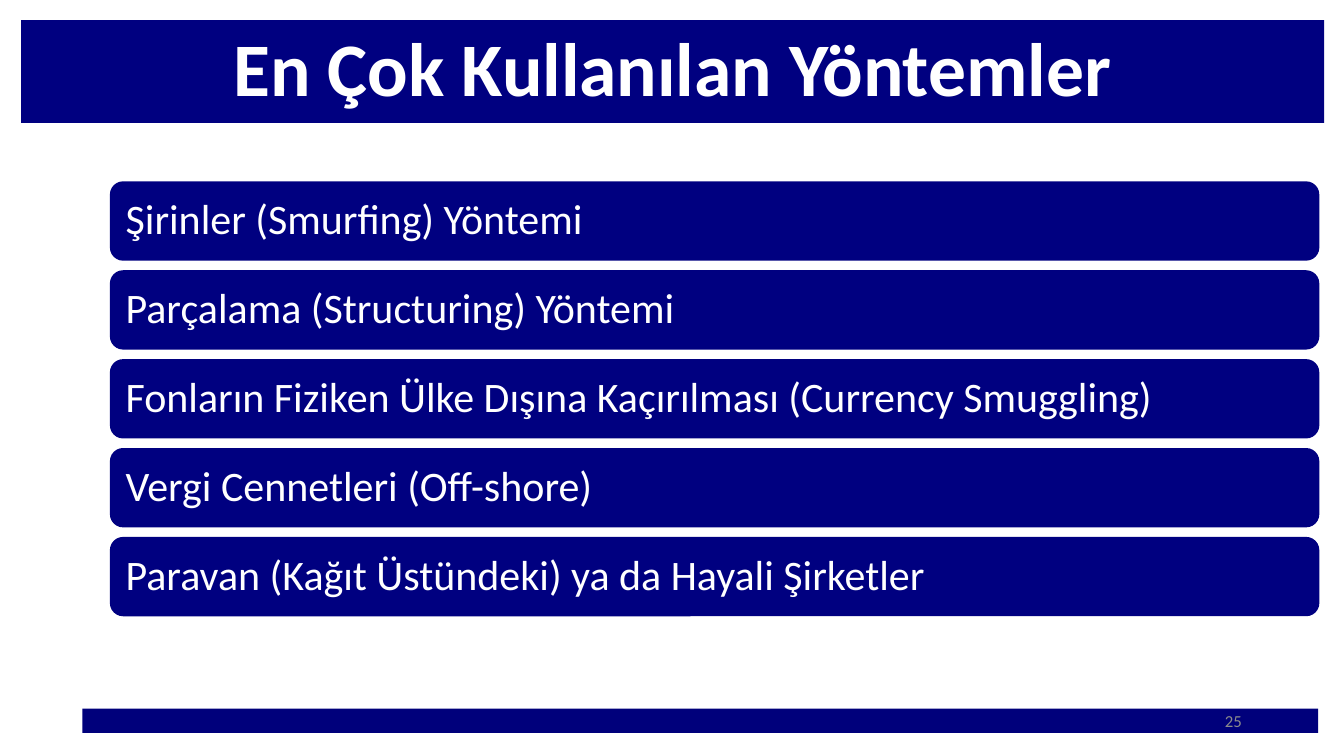
from dataclasses import dataclass

from pptx import Presentation
from pptx import util as u
from pptx.dml.color import RGBColor
from pptx.enum import shapes, text

NAVY = RGBColor(0x00, 0x00, 0x80)
DARK = RGBColor(0x00, 0x00, 0x7B)
WHITE = RGBColor(0xFF, 0xFF, 0xFF)
GREY = RGBColor(0x8C, 0x8C, 0x8C)
FONT = "Calibri"
PITCH = 2.24  # distance between bar tops, cm


@dataclass
class Box:
    left: float
    top: float
    width: float
    height: float

    def place(self) -> tuple:
        return tuple(u.Cm(n) for n in (self.left, self.top, self.width, self.height))


def write(shape, words: str, size: float, color: RGBColor = WHITE, bold: bool = False,
          align=text.PP_ALIGN.LEFT, line: float = 0.9, inset: float = 0.25) -> None:
    frame = shape.text_frame
    frame.word_wrap = True
    frame.auto_size = text.MSO_AUTO_SIZE.NONE
    frame.vertical_anchor = text.MSO_ANCHOR.MIDDLE
    frame.margin_left = frame.margin_right = u.Cm(inset)
    par = frame.paragraphs[0]
    par.alignment = align
    par.line_spacing = line
    run = par.add_run()
    run.text = words
    font = run.font
    font.name, font.size, font.bold = FONT, u.Pt(size), bold
    font.color.rgb = color


def draw(slide, kind, box: Box, fill: RGBColor):
    shape = slide.shapes.add_shape(kind, *box.place())
    shape.shadow.inherit = False
    shape.fill.solid()
    shape.fill.fore_color.rgb = fill
    shape.line.fill.background()
    return shape


def main() -> None:
    deck = Presentation()
    deck.slide_width, deck.slide_height = u.Cm(33.87), u.Cm(19.05)
    slide = deck.slides.add_slide(deck.slide_layouts[5])

    # Title band
    title = slide.shapes.title
    title.left, title.top, title.width, title.height = Box(0.53, 0.51, 32.84, 2.59).place()
    title.fill.solid()
    title.fill.fore_color.rgb = NAVY
    write(title, "En Çok Kullanılan Yöntemler", 54, bold=True, align=text.PP_ALIGN.CENTER)

    # Footer band and page number
    draw(slide, shapes.MSO_SHAPE.RECTANGLE, Box(2.08, 17.86, 31.14, 0.61), DARK)
    page = slide.shapes.add_textbox(*Box(23.93, 17.65, 7.62, 1.02).place())
    write(page, "25", 12, color=GREY, align=text.PP_ALIGN.RIGHT, line=1.0)

    # Method bars
    names = [
        "Şirinler (Smurfing) Yöntemi",
        "Parçalama (Structuring) Yöntemi",
        "Fonların Fiziken Ülke Dışına Kaçırılması (Currency Smuggling)",
        "Vergi Cennetleri (Off-shore)",
        "Paravan (Kağıt Üstündeki) ya da Hayali Şirketler",
    ]
    for i, name in enumerate(names):
        box = Box(2.77, 4.57 + i * PITCH, 30.48, 2)
        bar = draw(slide, shapes.MSO_SHAPE.ROUNDED_RECTANGLE, box, NAVY)
        write(bar, name, 30, inset=0.3)

    deck.save("out.pptx")


if __name__ == "__main__":
    main()
